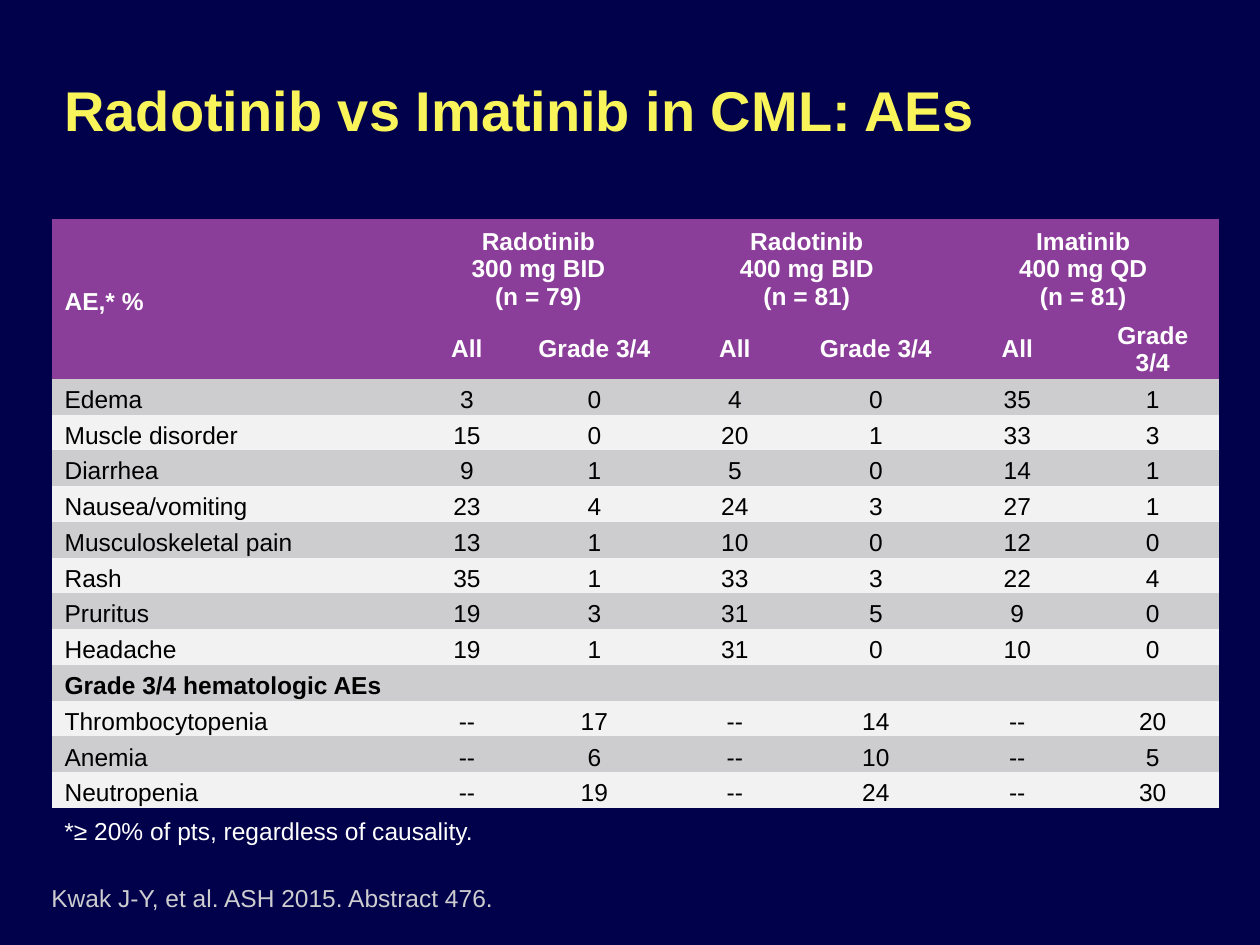
from dataclasses import dataclass

from pptx import Presentation, util as u
from pptx.dml.color import RGBColor
from pptx.enum import text
from pptx.oxml.ns import qn


@dataclass(frozen=True)
class Theme:
    font: str = "Arial"
    back: str = "00004B"
    title: str = "F8F45A"
    head: str = "8B3D9A"
    dark: str = "CDCDCF"
    light: str = "F2F2F2"
    white: str = "FFFFFF"
    black: str = "000000"
    big: int = 32
    body: int = 14


NO_GRID = "{2D5ABB26-0587-4C30-8999-92F81FD0307C}"
SCALE = 914400 / 126
COLS = [359, 112, 143, 138, 144, 139, 132]
HEADS = [89, 61]
ROW = 34
ARMS = ["Radotinib\n300 mg BID\n(n = 79)",
        "Radotinib\n400 mg BID\n(n = 81)",
        "Imatinib\n400 mg QD\n(n = 81)"]
GROUP = "Grade 3/4 hematologic AEs"
EVENTS = [
    ("Edema", 3, 0, 4, 0, 35, 1),
    ("Muscle disorder", 15, 0, 20, 1, 33, 3),
    ("Diarrhea", 9, 1, 5, 0, 14, 1),
    ("Nausea/vomiting", 23, 4, 24, 3, 27, 1),
    ("Musculoskeletal pain", 13, 1, 10, 0, 12, 0),
    ("Rash", 35, 1, 33, 3, 22, 4),
    ("Pruritus", 19, 3, 31, 5, 9, 0),
    ("Headache", 19, 1, 31, 0, 10, 0),
    (GROUP,) + ("",) * 6,
    ("Thrombocytopenia", "--", 17, "--", 14, "--", 20),
    ("Anemia", "--", 6, "--", 10, "--", 5),
    ("Neutropenia", "--", 19, "--", 24, "--", 30),
]


def px(n):
    return u.Emu(round(n * SCALE))


def rgb(tone):
    return RGBColor.from_string(tone)


class Deck:
    """Holds the theme and the current slide, and draws each kind of element."""

    def __init__(self, theme):
        self.theme = theme
        self.prs = Presentation()
        self.prs.slide_width, self.prs.slide_height = px(1260), px(945)
        self.slide = self.prs.slides.add_slide(self.prs.slide_layouts[6])
        fill = self.slide.background.fill
        fill.solid()
        fill.fore_color.rgb = rgb(theme.back)

    def style(self, frame, tone, size, bold=False, align=text.PP_ALIGN.LEFT):
        for para in frame.paragraphs:
            para.alignment = align
            font = para.font
            font.name, font.size, font.bold = self.theme.font, u.Pt(size), bold
            font.color.rgb = rgb(tone)

    def label(self, words, box, tone, size, anchor, bold=False):
        frame = self.slide.shapes.add_textbox(*map(px, box)).text_frame
        frame.word_wrap = True
        frame.vertical_anchor = anchor
        frame.text = words
        self.style(frame, tone, size, bold)
        return frame

    def cell(self, cell, words, fill, tone, bold, align):
        cell.text = str(words)
        cell.margin_bottom = 0
        cell.vertical_anchor = text.MSO_ANCHOR.MIDDLE
        cell.fill.solid()
        cell.fill.fore_color.rgb = rgb(fill)
        self.style(cell.text_frame, tone, self.theme.body, bold, align)

    def table(self, left, top, cols, heights, rows):
        size = sum(cols), sum(heights)
        frame = self.slide.shapes.add_table(
            len(rows), len(cols), *map(px, (left, top, *size)))
        frame.element.find(".//" + qn("a:tableStyleId")).text = NO_GRID
        table = frame.table
        for col, width in zip(table.columns, cols):
            col.width = px(width)
        for row, height in zip(table.rows, heights):
            row.height = px(height)
        t = self.theme
        for r, row in enumerate(rows):
            head = r < len(HEADS)
            fill = t.head if head else (t.dark, t.light)[r % 2]
            tone = t.white if head else t.black
            for c, words in enumerate(row):
                align = text.PP_ALIGN.CENTER if c else text.PP_ALIGN.LEFT
                self.cell(table.cell(r, c), words, fill, tone,
                          head or row[0] == GROUP, align)
        return table


def main():
    t = Theme()
    deck = Deck(t)
    deck.label("Radotinib vs Imatinib in CML: AEs", (52, 33, 1163, 152),
               t.title, t.big, text.MSO_ANCHOR.MIDDLE, True)
    top = ["AE,* %"] + [words for arm in ARMS for words in (arm, "")]
    sub = [""] + ["All", "Grade 3/4"] * len(ARMS)
    heights = HEADS + [ROW] * len(EVENTS)
    table = deck.table(52, 219, COLS, heights, [top, sub, *EVENTS])
    table.cell(0, 0).merge(table.cell(1, 0))
    for c in range(1, len(COLS), 2):
        table.cell(0, c).merge(table.cell(0, c + 1))
    deck.label("Kwak J-Y, et al. ASH 2015. Abstract 476.", (39, 876, 1179, 43),
               t.dark, t.body, text.MSO_ANCHOR.BOTTOM)
    note = deck.label("*≥ 20% of pts, regardless of causality.",
                      (52, 813, 490, 39), t.white, t.body, text.MSO_ANCHOR.TOP)
    note.paragraphs[0].line_spacing = 0.9
    deck.prs.save("out.pptx")


if __name__ == "__main__":
    main()
